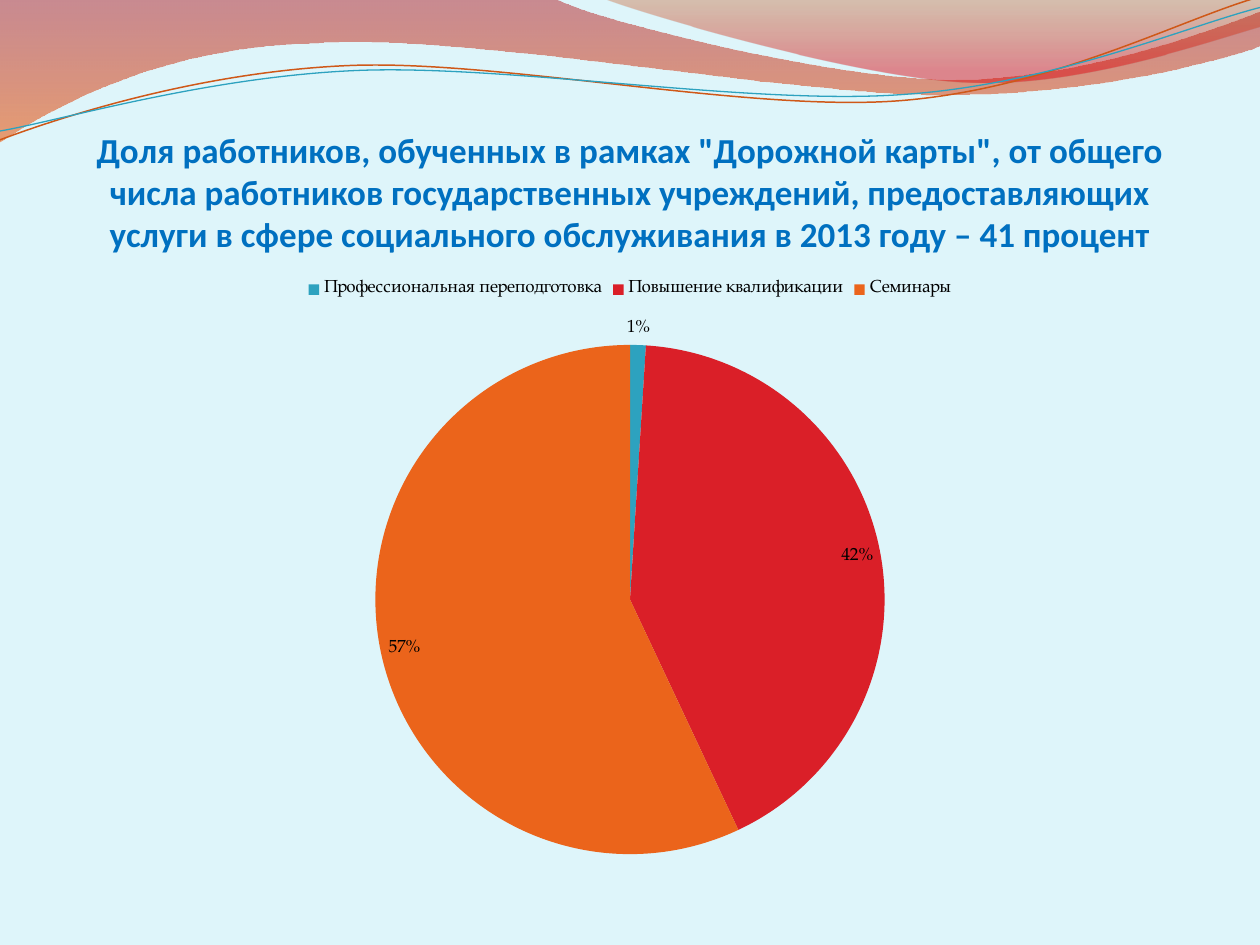
"""Build a slide with a wave header, a title and a pie chart of staff training."""
from math import cos, radians, sin
from lxml.etree import SubElement
from pptx import Presentation
from pptx.chart.data import CategoryChartData
from pptx.dml.color import RGBColor
from pptx.enum.chart import XL_CHART_TYPE, XL_LABEL_POSITION, XL_LEGEND_POSITION
from pptx.enum.text import MSO_ANCHOR, MSO_AUTO_SIZE, PP_ALIGN
from pptx.oxml.ns import qn
from pptx.util import Cm, Pt

BACKGROUND = RGBColor(0xDE, 0xF5, 0xFA)
TITLE_BLUE = RGBColor(0x00, 0x70, 0xC0)
BLACK = RGBColor(0x00, 0x00, 0x00)
TEAL = RGBColor(0x2D, 0xA2, 0xBF)
RED = RGBColor(0xDA, 0x1F, 0x28)
ORANGE = RGBColor(0xEB, 0x64, 0x1B)
RUST = RGBColor(0xCF, 0x58, 0x18)
CRIMSON = RGBColor(0xAF, 0x09, 0x11)
FLAME = RGBColor(0xEE, 0x53, 0x00)
BROWN = RGBColor(0xC2, 0x44, 0x00)
SCARLET = RGBColor(0xDC, 0x00, 0x0B)
INCH = 2.54
TILT = 2.7


def add_outline(page, start, segments, close):
    """Draw straight (one point) and cubic (three points) segments given in inches."""
    corners = [(Cm(x * INCH), Cm(y * INCH)) for x, y in sum(segments, [start])]
    builder = page.shapes.build_freeform(*corners[0])
    builder.add_line_segments(corners[1:], close=close)
    shape = builder.convert_to_shape()
    shape.shadow.inherit = False
    lines = iter(list(shape.element.iter(qn("a:lnTo"))))
    for segment in segments:
        first, *others = [next(lines) for point in segment]
        if others:
            curve = SubElement(first.getparent(), qn("a:cubicBezTo"))
            first.addprevious(curve)
            for line in (first, *others):
                curve.append(line[0])
                line.getparent().remove(line)
    page.shapes.title.element.addprevious(shape.element)
    return shape


deck = Presentation()
deck.slide_width, deck.slide_height = Cm(25.4), Cm(19.05)
page = deck.slides.add_slide(deck.slide_layouts[5])
page.background.fill.solid()
page.background.fill.fore_color.rgb = BACKGROUND

waves = [
    ((0, 0), [[(4.4, -0.01)],
              [(4.76, 0.17), (6.64, 0.63), (7.58, 0.63)],
              [(8.53, 0.63), (9.58, 0.26), (10, 0.09)],
              [(10.01, 0.36)],
              [(9.83, 0.44), (8.7, 0.76), (7.46, 0.75)],
              [(6.22, 0.75), (3.82, 0.28), (2.57, 0.34)],
              [(1.29, 0.36), (0.46, 0.83), (-0.01, 1.13)],
              [(0, 0)]],
     [(0, CRIMSON, 45), (1, FLAME, 55)]),
    ((4.79, -0.01), [[(5.09, 0.11), (6.82, 0.62), (7.69, 0.65)],
                     [(8.56, 0.69), (9.61, 0.32), (10, 0.21)],
                     [(10, 0)],
                     [(4.79, -0.01)]],
     [(0, BROWN, 30), (0.8, SCARLET, 45)]),
]
for start, segments, stops in waves:
    wave = add_outline(page, start, segments, True)
    wave.line.fill.background()
    wave.fill.gradient()
    wave.fill.gradient_angle = 270
    for stop, (position, color, opacity) in zip(wave.fill.gradient_stops, stops):
        stop.position = position
        stop.color.rgb = color
    for node, (position, color, opacity) in zip(wave.element.iter(qn("a:srgbClr")), stops):
        SubElement(node, qn("a:alpha"), val=str(opacity * 1000))

strands = [
    ((4.99, 0.57), (0, 1.11), [[(0.48, 0.93), (1.58, 0.57), (2.77, 0.52)],
                               [(3.95, 0.47), (5.93, 0.89), (7.13, 0.8)],
                               [(8.33, 0.71), (9.38, 0.15), (9.98, -0.02)]], RUST, 0.85),
    ((5, 0.59), (0, 1.04), [[(0.47, 0.96), (1.64, 0.61), (2.83, 0.56)],
                            [(4.03, 0.51), (5.97, 0.84), (7.17, 0.75)],
                            [(8.36, 0.67), (9.41, 0.21), (10, 0.06)]], TEAL, 0.75),
]
cosine, sine = cos(radians(TILT)), sin(radians(TILT))
for (pivot_x, pivot_y), start, segments, color, width in strands:
    level = [[(pivot_x + (x - pivot_x) * cosine - (y - pivot_y) * sine,
               pivot_y + (x - pivot_x) * sine + (y - pivot_y) * cosine)
              for x, y in segment] for segment in [[start], *segments]]
    strand = add_outline(page, level[0][0], level[1:], False)
    strand.rotation = 360 - TILT
    strand.fill.background()
    strand.line.color.rgb = color
    strand.line.width = Pt(width)

title = page.shapes.title
title.left, title.top, title.width, title.height = Cm(1.27), Cm(1.96), Cm(22.86), Cm(3.18)
frame = title.text_frame
frame.text = ('Доля работников, обученных в рамках "Дорожной карты", от общего числа '
              'работников государственных учреждений, предоставляющих услуги в сфере '
              'социального обслуживания в 2013 году – 41 процент')
frame.word_wrap = True
frame.auto_size = MSO_AUTO_SIZE.NONE
frame.vertical_anchor = MSO_ANCHOR.BOTTOM
frame.margin_left = frame.margin_right = frame.margin_bottom = 0
frame.margin_top = Cm(0.13)
paragraph = frame.paragraphs[0]
paragraph.alignment = PP_ALIGN.CENTER
span = paragraph.runs[0]
span.font.name, span.font.size, span.font.bold = "Calibri", Pt(20), True
span.font.color.rgb = TITLE_BLUE

data = CategoryChartData()
data.categories = ["Профессиональная переподготовка", "Повышение квалификации", "Семинары"]
data.add_series("Series 1", (1, 42, 57))
chart = page.shapes.add_chart(
    XL_CHART_TYPE.PIE, Cm(1.27), Cm(5.38), Cm(22.86), Cm(12.19), data).chart
chart.has_title = False
chart.font.name, chart.font.size = "TeX Gyre Pagella", Pt(10)
chart.font.color.rgb = BLACK
chart.has_legend = True
chart.legend.position = XL_LEGEND_POSITION.TOP
chart.legend.include_in_layout = False

plot = chart.plots[0]
plot.vary_by_categories = True
plot.has_data_labels = True
labels = plot.data_labels
labels.show_percentage, labels.show_value = True, False
labels.number_format, labels.number_format_is_linked = "0%", False
labels.position = XL_LABEL_POSITION.BEST_FIT
for index, color in enumerate((TEAL, RED, ORANGE)):
    fill = plot.series[0].points[index].format.fill
    fill.solid()
    fill.fore_color.rgb = color

deck.save("out.pptx")
